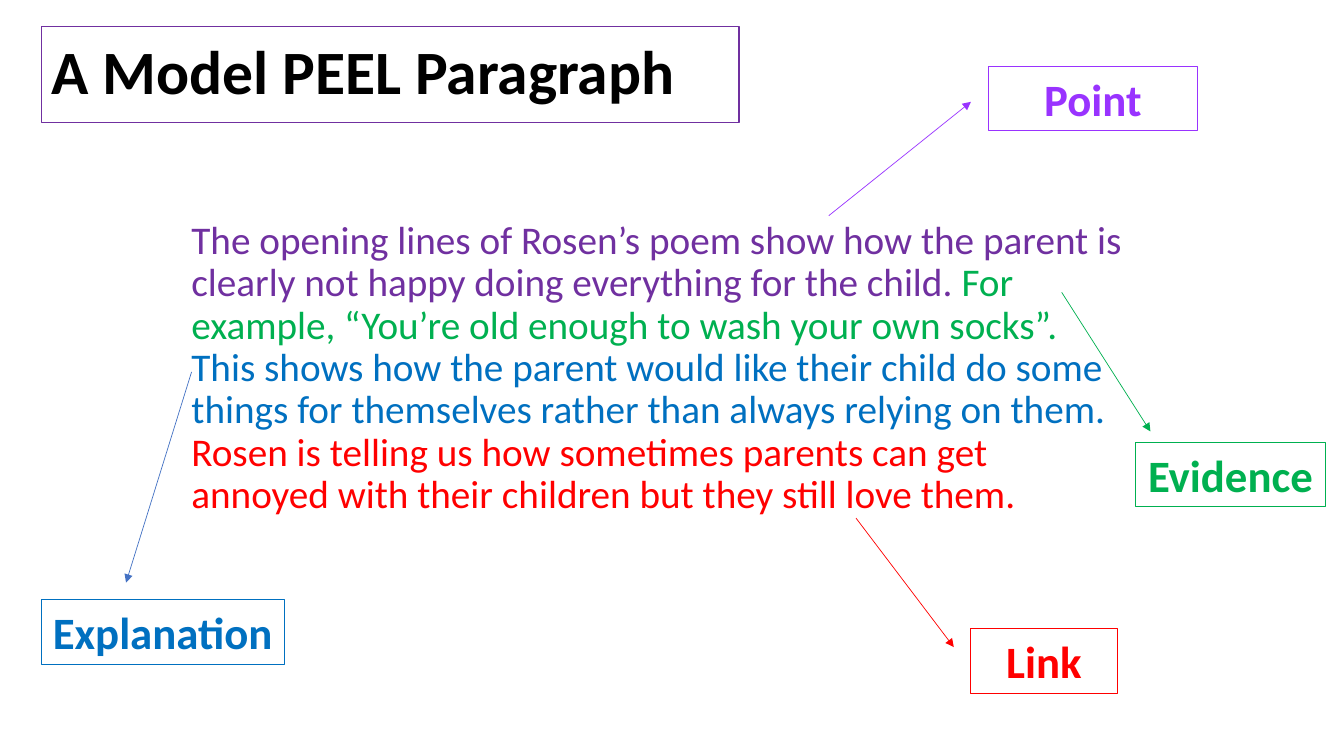
import pptx
import pptx.dml.color
import pptx.enum.dml
import pptx.enum.shapes
import pptx.enum.text
import pptx.oxml
import pptx.oxml.ns
import pptx.util
from pptx.util import Inches

RGBColor = pptx.dml.color.RGBColor
BLACK = RGBColor(0x00, 0x00, 0x00)
PURPLE = RGBColor(0x70, 0x30, 0xA0)
VIOLET = RGBColor(0x99, 0x33, 0xFF)
GREEN = RGBColor(0x00, 0xB0, 0x50)
BLUE = RGBColor(0x00, 0x70, 0xC0)
STEEL = RGBColor(0x44, 0x72, 0xC4)
RED = RGBColor(0xFF, 0x00, 0x00)

LABEL_HEIGHT = 0.64

PARAGRAPH_PARTS = [
    ("The opening lines of Rosen’s poem show how the parent is clearly not "
     "happy doing everything for the child. ", PURPLE),
    ("For example, “You’re old enough to wash your own socks”. ", GREEN),
    ("This shows how the parent would like their child do some things for "
     "themselves rather than always relying on them. ", BLUE),
    ("Rosen is telling us how sometimes parents can get annoyed with their "
     "children but they still love them.", RED),
]

LABELS = [
    ("Point", 9.8, 0.66, 2.08, VIOLET),
    ("Explanation", 0.41, 5.95, 2.41, BLUE),
    ("Evidence", 11.26, 4.39, 1.89, GREEN),
    ("Link", 9.63, 6.24, 1.45, RED),
]

ARROWS = [
    ((8.22, 2.14), (9.63, 1.01), VIOLET),
    ((10.53, 2.9), (11.41, 4.28), GREEN),
    ((8.49, 5.14), (9.46, 6.42), RED),
    ((1.9, 3.69), (1.25, 5.78), STEEL),
]


class PeelSlide:
    font_name = "Calibri"
    box_line = pptx.util.Pt(0.75)
    arrow_line = pptx.util.Pt(0.5)

    def __init__(self, presentation):
        self.slide = presentation.slides.add_slide(presentation.slide_layouts[6])

    def style(self, paragraph, size, bold=False):
        paragraph.font.name = self.font_name
        paragraph.font.size = pptx.util.Pt(size)
        paragraph.font.bold = bold

    def passage(self, left, top, width, height, parts):
        passage = self.slide.shapes.add_textbox(
            Inches(left), Inches(top), Inches(width), Inches(height))
        passage.text_frame.word_wrap = True
        paragraph = passage.text_frame.paragraphs[0]
        paragraph.line_spacing = 0.9
        paragraph.space_before = pptx.util.Pt(10)
        self.style(paragraph, 28)
        for wording, color in parts:
            run = paragraph.add_run()
            run.text = wording
            run.font.color.rgb = color

    def framed_text(self, wording, left, top, width, height, line_color,
                    text_color, size, align, anchor, spacing=1.0):
        frame = self.slide.shapes.add_shape(
            pptx.enum.shapes.MSO_SHAPE.RECTANGLE,
            Inches(left), Inches(top), Inches(width), Inches(height))
        frame.shadow.inherit = False
        frame.fill.background()
        frame.line.color.rgb = line_color
        frame.line.width = self.box_line
        frame.text_frame.word_wrap = True
        frame.text_frame.vertical_anchor = anchor
        paragraph = frame.text_frame.paragraphs[0]
        paragraph.text = wording
        paragraph.alignment = align
        paragraph.line_spacing = spacing
        self.style(paragraph, size, bold=True)
        paragraph.font.color.rgb = text_color
        return frame

    def title(self, wording, left, top, width, height):
        self.framed_text(wording, left, top, width, height, PURPLE, BLACK, 44,
                         pptx.enum.text.PP_ALIGN.LEFT,
                         pptx.enum.text.MSO_ANCHOR.MIDDLE, 0.9)

    def label(self, wording, left, top, width, color):
        label = self.framed_text(wording, left, top, width, LABEL_HEIGHT,
                                 color, color, 32,
                                 pptx.enum.text.PP_ALIGN.CENTER,
                                 pptx.enum.text.MSO_ANCHOR.TOP)
        label.text_frame.auto_size = pptx.enum.text.MSO_AUTO_SIZE.SHAPE_TO_FIT_TEXT

    def arrow(self, start, end, color):
        arrow = self.slide.shapes.add_connector(
            pptx.enum.shapes.MSO_CONNECTOR.STRAIGHT,
            *(Inches(length) for length in start + end))
        arrow.line.color.rgb = color
        arrow.line.width = self.arrow_line
        head = pptx.oxml.parse_xml(
            f'<a:tailEnd {pptx.oxml.ns.nsdecls("a")} type="triangle"/>')
        arrow.line._get_or_add_ln().append(head)
        arrow._element.spPr.append(pptx.oxml.parse_xml(
            f'<a:effectLst {pptx.oxml.ns.nsdecls("a")}/>'))


def main():
    presentation = pptx.Presentation()
    presentation.slide_width = Inches(13.33)
    presentation.slide_height = Inches(7.5)
    peel = PeelSlide(presentation)
    peel.passage(1.8, 2.14, 9.45, 4.76, PARAGRAPH_PARTS)
    peel.title("A Model PEEL Paragraph", 0.41, 0.26, 6.92, 0.96)
    for label in LABELS:
        peel.label(*label)
    for arrow in ARROWS:
        peel.arrow(*arrow)
    presentation.save("out.pptx")


if __name__ == "__main__":
    main()
